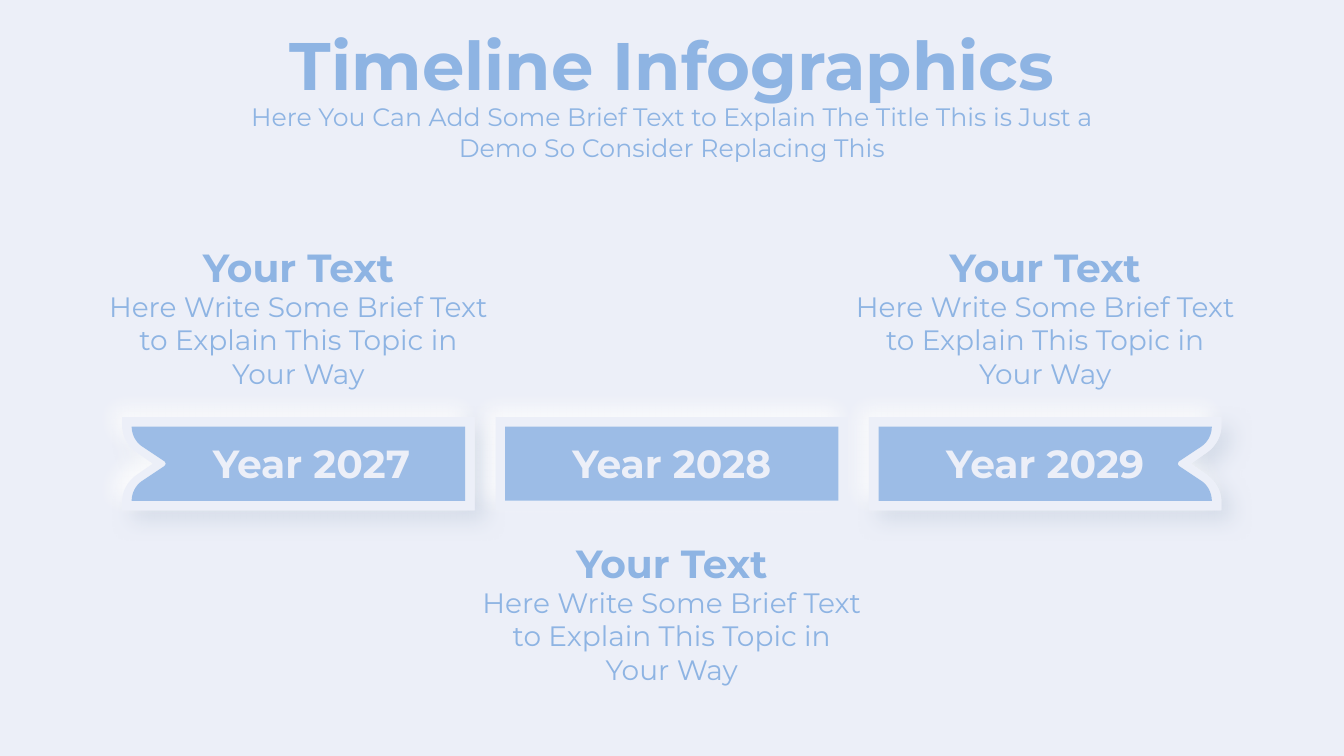
import pptx
import pptx.util
import pptx.dml.color
import pptx.enum.shapes
import pptx.enum.text
import pptx.oxml
import pptx.oxml.ns

Cm = pptx.util.Cm
HUES = {"base": "ECEFF8", "blue": "8EB4E3", "dark": "D1D9E6", "light": "FFFFFF"}
FONT = "Montserrat"
WIDE, HIGH = 33.87, 19.05
BAR_W, BAR_H, PITCH, RIM = 8.88, 2.35, 9.41, 0.24
DETAIL = "Here Write Some Brief Text to Explain This Topic in Your Way"
OUTER = {"curve": [(0, 0.24), (0, 0.49), (0.15, 0.74), (0.36, 0.89)],
         "tip": [(0.77, 1.175)]}
INNER = {"curve": [(0, 0), (0, 0.2), (0.1, 0.39), (0.26, 0.5)],
         "tip": [(0.83, 0.88), (0.86, 0.935), (0.83, 0.99)]}
STEPS = 16


def paint(fill, hue):
    """Give a fill a solid colour from the palette."""
    fill.solid()
    fill.fore_color.rgb = pptx.dml.color.RGBColor.from_string(HUES[hue])


def write(shape, words, size, hue="blue", bold=False):
    """Put one centred run into a text frame."""
    frame = shape.text_frame
    frame.word_wrap = True
    frame.auto_size = pptx.enum.text.MSO_AUTO_SIZE.SHAPE_TO_FIT_TEXT
    frame.vertical_anchor = pptx.enum.text.MSO_ANCHOR.TOP
    para = frame.paragraphs[0]
    para.alignment = pptx.enum.text.PP_ALIGN.CENTER
    run = para.add_run()
    run.text = words
    run.font.name = FONT
    run.font.size = pptx.util.Pt(size)
    run.font.bold = bold
    run.font.color.rgb = pptx.dml.color.RGBColor.from_string(HUES[hue])


def label(slide, mid, top, width, height, words, size, **style):
    """Add a text box centred on a given x."""
    box = slide.shapes.add_textbox(
        Cm(mid - width / 2), Cm(top), Cm(width), Cm(height))
    write(box, words, size, **style)


def bend(curve):
    """Sample a cubic curve as points."""
    spots = []
    for step in range(STEPS + 1):
        t = step / STEPS
        parts = ((1 - t) ** 3, 3 * t * (1 - t) ** 2, 3 * t * t * (1 - t), t ** 3)
        spots.append(tuple(sum(k * p[axis] for k, p in zip(parts, curve))
                           for axis in (0, 1)))
    return spots


def ribbon(slide, left, top, width, height, notch, flip):
    """Draw a bar with a notch at its left end, or right if flipped."""
    half = bend(notch["curve"])
    spots = [(width, height), (width, 0), (0, 0)] + half + notch["tip"]
    spots += [(x, height - y) for x, y in reversed(half)] + [(0, height)]
    spots = [(Cm(left + (width - x if flip else x)), Cm(top + y)) for x, y in spots]
    pen = slide.shapes.build_freeform(*spots[0], scale=1.0)
    pen.add_line_segments(spots[1:], close=True)
    return pen.convert_to_shape()


def panel(slide, left, top, width, height, notch, end, hue):
    """Draw a flat bar, plain or notched at one end."""
    if end:
        shape = ribbon(slide, left, top, width, height, notch, end == "right")
    else:
        shape = slide.shapes.add_shape(
            pptx.enum.shapes.MSO_SHAPE.RECTANGLE,
            Cm(left), Cm(top), Cm(width), Cm(height))
    shape.shadow.inherit = False
    paint(shape.fill, hue)
    shape.line.fill.background()
    return shape


def glow(shape, hue, angle):
    """Cast a soft shadow in the given direction."""
    space = pptx.oxml.ns.nsdecls("a")
    shade = pptx.oxml.parse_xml(
        f'<a:outerShdw {space} blurRad="190500" dist="127000" '
        f'dir="{angle * 60000}" algn="ctr" rotWithShape="0">'
        f'<a:srgbClr val="{HUES[hue]}"><a:alpha val="80000"/></a:srgbClr>'
        '</a:outerShdw>')
    shape.element.spPr.find(pptx.oxml.ns.qn("a:effectLst")).append(shade)


def bar(slide, left, top, year, end, shift):
    """Build one raised year bar with its label."""
    shades = [("dark", 45), ("light", 225)] if end else [("light", 225)]
    for hue, angle in shades:
        rim = panel(slide, left, top, BAR_W, BAR_H, OUTER, end, "base")
        glow(rim, hue, angle)
    face = panel(slide, left + RIM, top + RIM, BAR_W - 2 * RIM,
                 BAR_H - 2 * RIM, INNER, end, "blue")
    tint = face.element.spPr.find(".//" + pptx.oxml.ns.qn("a:srgbClr"))
    tint.append(pptx.oxml.parse_xml(
        f'<a:alpha {pptx.oxml.ns.nsdecls("a")} val="85000"/>'))
    label(slide, left + BAR_W / 2 + shift, top + 0.44, 6.65, 1.45,
          year, 28, hue="base", bold=True)


def note(slide, mid, top):
    """Build a heading with its detail text."""
    label(slide, mid, top, 8.38, 1.45, "Your Text", 28, bold=True)
    label(slide, mid, top + 1.16, 10.11, 2.82, DETAIL, 20)


def header(slide, left, top, width):
    """Place the title and the line under it."""
    title = slide.shapes.title
    title.left, title.top = Cm(left), Cm(top)
    title.width, title.height = Cm(width), Cm(2.31)
    write(title, "Timeline Infographics", 48, bold=True)
    label(slide, left + width / 2, top + 1.98, width, 1.8,
          "Here You Can Add Some Brief Text to Explain The Title "
          "This is Just a Demo So Consider Replacing This", 18)


def main():
    """Build the timeline slide and save it."""
    deck = pptx.Presentation()
    deck.slide_width, deck.slide_height = Cm(WIDE), Cm(HIGH)
    slide = deck.slides.add_slide(deck.slide_layouts[5])
    paint(slide.background.fill, "base")
    header(slide, 5.85, 0.46, 22.17)
    stops = [("Year 2027", "left", 0.33, 6.0), ("Year 2028", None, 0, 13.46),
             ("Year 2029", "right", 0, 6.0)]
    for index, (year, end, shift, top) in enumerate(stops):
        left = 3.08 + index * PITCH
        note(slide, left + BAR_W / 2, top)
        bar(slide, left, 10.51, year, end, shift)
    deck.save("out.pptx")


if __name__ == "__main__":
    main()
